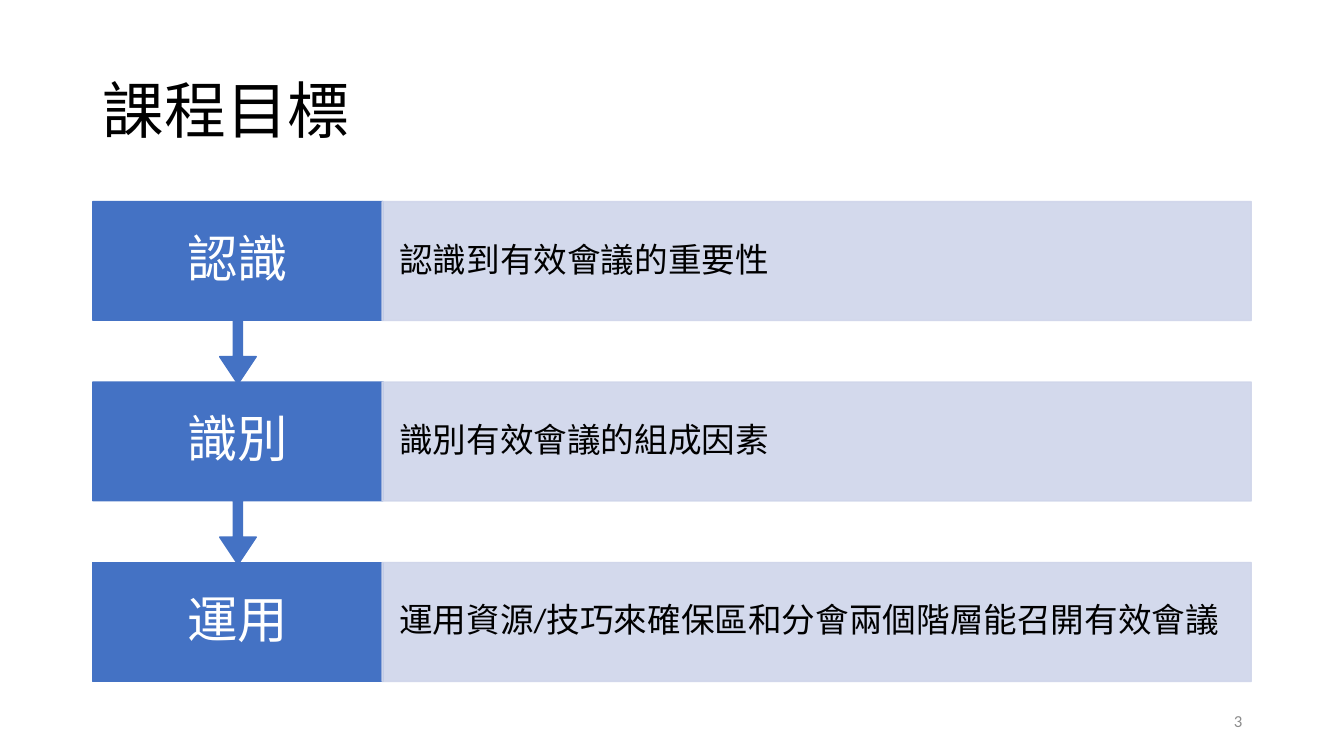
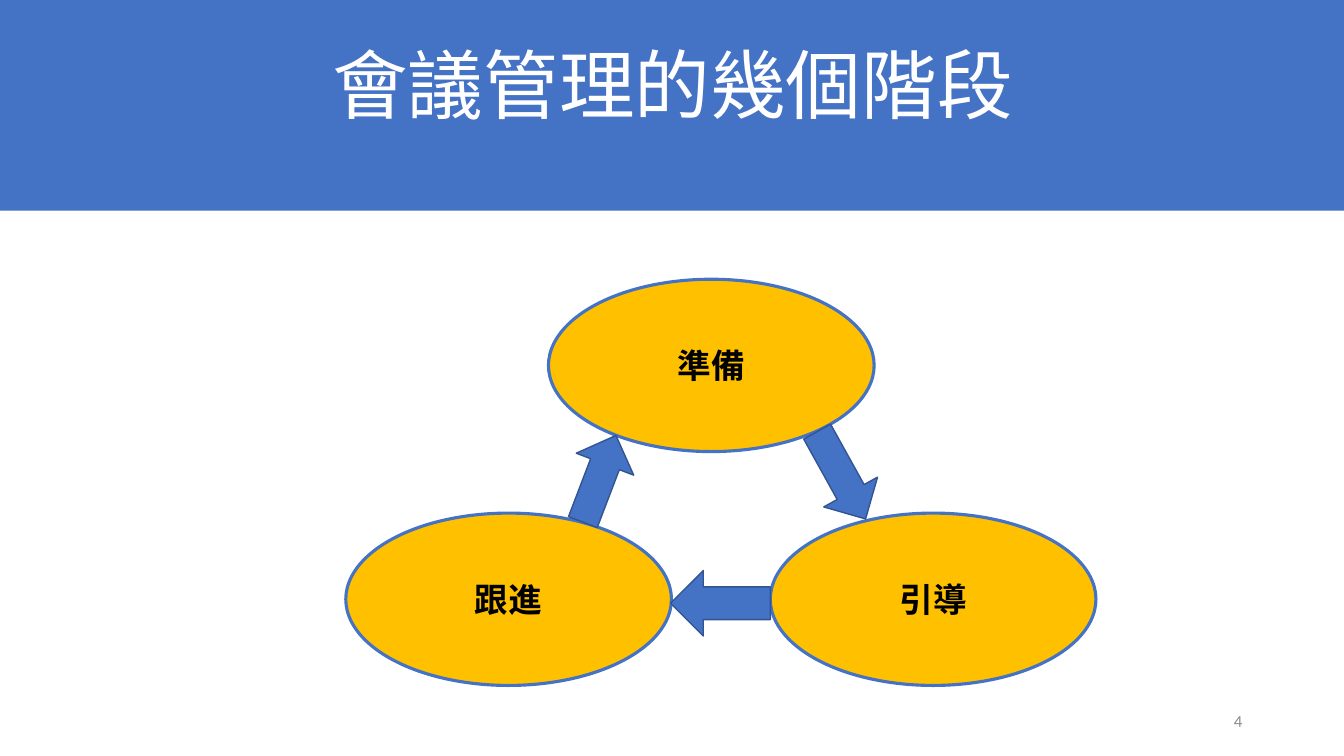
"""Build two slides: the course goals and the stages of meeting management."""
from dataclasses import dataclass

from lxml.etree import SubElement
from pptx import Presentation
from pptx.dml.color import RGBColor
from pptx.enum.shapes import MSO_SHAPE as Shape
from pptx.enum.text import MSO_ANCHOR as Anchor, MSO_AUTO_SIZE as AutoSize, PP_ALIGN as Align
from pptx.oxml.ns import qn
from pptx.util import Inches, Pt

COLORS = {
    "blue": "4472C4",
    "edge": "325491",
    "pale": "CFD5EA",
    "gold": "FFC000",
    "gray": "8C8C8C",
    "black": "000000",
    "white": "FFFFFF",
}
MARGIN, CONTENT_W = 0.92, 11.5
STEP_TOP, STEP_PITCH, STEP_H, CALLOUT_H = 2, 1.79, 1.18, 1.81
LABEL_W, DETAIL_X, DETAIL_W = 2.88, 3.79, 8.62
STAGE_W, STAGE_H = 3.23, 1.71


@dataclass
class Box:
    x: float
    y: float
    w: float
    h: float


@dataclass
class TextStyle:
    size: float
    color: str = "black"
    align: Align = Align.LEFT
    anchor: Anchor = Anchor.MIDDLE
    font: str = "Calibri"
    bold: bool = False
    spacing: float = 1.0
    inset_x: float = 0.1
    inset_y: float = 0.05


@dataclass
class Step:
    label: str
    detail: str


@dataclass
class Stage:
    label: str
    x: float
    y: float


@dataclass
class Arrow:
    box: Box
    rotation: float


LABEL = TextStyle(36, "white", Align.CENTER, spacing=0.9, inset_x=0.2, inset_y=0.28)
DETAIL = TextStyle(24, spacing=0.9, inset_x=0.17, inset_y=0.33)
STAGE = TextStyle(24, align=Align.CENTER, font="Times New Roman", bold=True)
NUMBER = TextStyle(12, "gray", Align.RIGHT)
GOAL_TITLE = TextStyle(44, spacing=0.9)
STAGE_TITLE = TextStyle(54, "white", Align.CENTER, Anchor.BOTTOM, spacing=0.9)

STEPS = [
    Step("認識", "認識到有效會議的重要性"),
    Step("識別", "識別有效會議的組成因素"),
    Step("運用", "運用資源/技巧來確保區和分會兩個階層能召開有效會議"),
]
STAGES = [
    Stage("準備", 5.44, 2.77),
    Stage("跟進", 3.43, 5.09),
    Stage("引導", 7.64, 5.09),
]
ARROWS = [
    Arrow(Box(8.04, 4.22, 0.61, 0.99), 331),
    Arrow(Box(6.82, 5.49, 0.65, 0.99), 90),
    Arrow(Box(5.64, 4.29, 0.61, 0.92), 200.9),
]


def rgb(name: str) -> RGBColor:
    return RGBColor.from_string(COLORS[name])


def lengths(box: Box) -> list:
    return [Inches(v) for v in (box.x, box.y, box.w, box.h)]


def write(sp, text: str, style: TextStyle) -> None:
    tf = sp.text_frame
    tf.text = text
    tf.word_wrap = True
    tf.auto_size = AutoSize.NONE
    tf.vertical_anchor = style.anchor
    tf.margin_left = tf.margin_right = Inches(style.inset_x)
    tf.margin_top = tf.margin_bottom = Inches(style.inset_y)
    p = tf.paragraphs[0]
    p.alignment = style.align
    p.line_spacing = style.spacing
    for r in p.runs:
        r.font.name = style.font
        r.font.size = Pt(style.size)
        r.font.bold = style.bold
        r.font.color.rgb = rgb(style.color)


def add_block(s, kind: Shape, box: Box, fill: str, line: str = "", width: float = 1):
    sp = s.shapes.add_shape(kind, *lengths(box))
    sp.shadow.inherit = False
    sp.fill.solid()
    sp.fill.fore_color.rgb = rgb(fill)
    if line:
        sp.line.color.rgb = rgb(line)
        sp.line.width = Pt(width)
    else:
        sp.line.fill.background()
    return sp


def set_opacity(sp, percent: int) -> None:
    for color in sp.element.spPr.iter(qn("a:srgbClr")):
        SubElement(color, qn("a:alpha")).set("val", str(percent * 1000))


def add_slide(prs, title: str, box: Box, style: TextStyle, number: int):
    s = prs.slides.add_slide(prs.slide_layouts[5])
    sp = s.shapes.title
    sp.left, sp.top, sp.width, sp.height = lengths(box)
    write(sp, title, style)
    write(s.shapes.add_textbox(*lengths(Box(9.42, 6.95, 3, 0.4))), str(number), NUMBER)
    return s


def add_step(s, step: Step, y: float, last: bool) -> None:
    if last:
        label = add_block(s, Shape.RECTANGLE, Box(MARGIN, y, LABEL_W, STEP_H), "blue", "blue")
    else:
        label = add_block(s, Shape.DOWN_ARROW_CALLOUT, Box(MARGIN, y, LABEL_W, CALLOUT_H), "blue", "blue")
        for i, value in enumerate((0.05, 0.1, 0.15, 0.65)):
            label.adjustments[i] = value
    write(label, step.label, LABEL)
    detail = add_block(s, Shape.RECTANGLE, Box(DETAIL_X, y, DETAIL_W, STEP_H), "pale", "pale")
    set_opacity(detail, 90)
    write(detail, step.detail, DETAIL)


def build_goals(prs) -> None:
    s = add_slide(prs, "課程目標", Box(MARGIN, 0.4, CONTENT_W, 1.45), GOAL_TITLE, 3)
    for i, step in reversed(list(enumerate(STEPS))):
        add_step(s, step, STEP_TOP + i * STEP_PITCH, i == len(STEPS) - 1)


def build_stages(prs) -> None:
    s = add_slide(prs, "會議管理的幾個階段", Box(MARGIN, 0.32, CONTENT_W, 1.02), STAGE_TITLE, 4)
    band = add_block(s, Shape.RECTANGLE, Box(0, 0, 13.33, 2.09), "blue")
    s.shapes.title.element.addprevious(band.element)
    for stage in STAGES:
        box = Box(stage.x, stage.y, STAGE_W, STAGE_H)
        write(add_block(s, Shape.OVAL, box, "gold", "blue", 2.25), stage.label, STAGE)
    for arrow in ARROWS:
        add_block(s, Shape.DOWN_ARROW, arrow.box, "blue", "edge").rotation = arrow.rotation


def main() -> None:
    prs = Presentation()
    prs.slide_width, prs.slide_height = Inches(13.33), Inches(7.5)
    build_goals(prs)
    build_stages(prs)
    prs.save("out.pptx")


if __name__ == "__main__":
    main()
